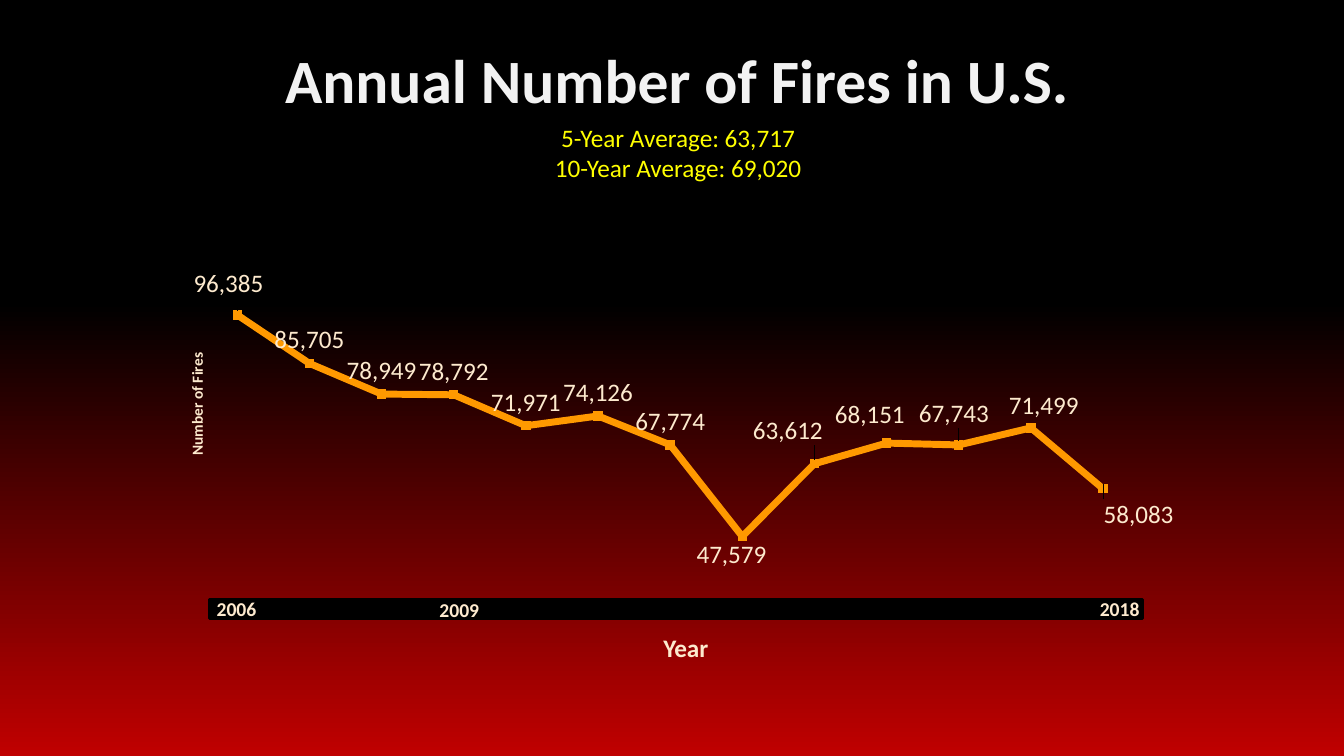
from lxml import etree
from pptx import Presentation
from pptx.chart.data import CategoryChartData
from pptx.dml.color import RGBColor
from pptx.enum.chart import XL_CHART_TYPE, XL_LABEL_POSITION, XL_MARKER_STYLE
from pptx.enum.shapes import MSO_SHAPE
from pptx.enum.text import MSO_ANCHOR, PP_ALIGN
from pptx.oxml.ns import qn
from pptx.util import Inches, Pt

LINE = XL_CHART_TYPE.LINE_MARKERS
ABOVE = XL_LABEL_POSITION.ABOVE
SQUARE = XL_MARKER_STYLE.SQUARE
RECT = MSO_SHAPE.RECTANGLE
MIDDLE = MSO_ANCHOR.MIDDLE
LEFT, CENTER = PP_ALIGN.LEFT, PP_ALIGN.CENTER

FACE = "Calibri"
BLACK, RED, CREAM, ORANGE = "000000", "C00000", "FDEACE", "FF9900"
FIRES = [96385, 85705, 78949, 78792, 71971, 74126, 67774,
         47579, 63612, 68151, 67743, 71499, 58083]
# Label shifts by point, in percent of the chart's width and height
SHIFTS = {0: (-0.9, -1.4), 7: (-1.1, 7.3), 8: (-2.7, -1.7), 9: (-1.7, -0.9),
          10: (-0.5, -1.4), 11: (1.3, 0.2), 12: (3.6, 8.5)}


def color(code):
    return RGBColor.from_string(code)


def style(font, size, code, bold=False):
    font.name, font.size, font.bold = FACE, Pt(size), bold
    font.color.rgb = color(code)


def paint(slide):
    fill = slide.background.fill
    fill.gradient()
    fill.gradient_angle = 270
    for stop, place, code in zip(fill.gradient_stops, (0.4, 1), (BLACK, RED)):
        stop.position = place
        stop.color.rgb = color(code)


def add_text(slide, box, text, size, code=CREAM, bold=True, align=LEFT, wrap=True):
    shape = slide.shapes.add_textbox(*map(Inches, box))
    frame = shape.text_frame
    frame.word_wrap = wrap
    frame.text = text
    for para in frame.paragraphs:
        para.alignment = align
        for run in para.runs:
            style(run.font, size, code, bold)
    return shape


def add_band(slide, box):
    band = slide.shapes.add_shape(RECT, *map(Inches, box))
    band.shadow.inherit = False
    band.fill.solid()
    band.fill.fore_color.rgb = color(BLACK)
    band.line.color.rgb = color(BLACK)
    band.line.width = Pt(2)


def set_layout(parent, index, **values):
    """Place a chart element by hand, with the layout as child number index."""
    for old in parent.findall(qn("c:layout")):
        parent.remove(old)
    layout = etree.Element(qn("c:layout"))
    manual = etree.SubElement(layout, qn("c:manualLayout"))
    for tag, val in values.items():
        etree.SubElement(manual, qn("c:" + tag)).set("val", str(val))
    parent.insert(index, layout)


def label_points(series):
    labels = series.data_labels
    labels.show_value = True
    labels.number_format = "#,##0"
    labels.number_format_is_linked = False
    labels.position = ABOVE
    style(labels.font, 18, CREAM)
    for point in SHIFTS:
        label = series.points[point].data_label
        label.position = ABOVE
        style(label.font, 18, CREAM)
    nodes = labels._element.findall(qn("c:dLbl"))
    for node, (right, down) in zip(nodes, SHIFTS.values()):
        set_layout(node, 1, x=right / 100, y=down / 100)


def add_fires(slide, box):
    data = CategoryChartData(number_format="#,##0")
    data.categories = [str(n + 1) for n in range(len(FIRES))]
    data.add_series("Series 1", FIRES)
    chart = slide.shapes.add_chart(LINE, *map(Inches, box), data).chart
    chart.has_legend = chart.has_title = False
    style(chart.font, 18, BLACK)
    for axis in (chart.category_axis, chart.value_axis):
        axis.has_major_gridlines = False
        axis.visible = False
    chart.value_axis.minimum_scale = 0
    chart.value_axis.maximum_scale = 120000

    plot = chart.plots[0]
    plot.vary_by_categories = False
    series = plot.series[0]
    series.smooth = False
    series.format.line.color.rgb = color(ORANGE)
    series.format.line.width = Pt(5)
    marker = series.marker
    marker.style, marker.size = SQUARE, 6
    marker.format.fill.solid()
    marker.format.fill.fore_color.rgb = color(ORANGE)
    marker.format.line.color.rgb = color(ORANGE)
    label_points(series)
    area = series._element.getparent().getparent()
    set_layout(area, 0, layoutTarget="inner", xMode="edge", yMode="edge",
               x=0.02, y=0.03, w=0.95, h=0.95)


def main():
    deck = Presentation()
    deck.slide_width, deck.slide_height = Inches(13.33), Inches(7.5)
    slide = deck.slides.add_slide(deck.slide_layouts[6])
    paint(slide)
    add_fires(slide, (1.8, 1.89, 9.84, 5.69))
    add_band(slide, (2.08, 5.95, 9.25, 0.19))
    title = add_text(slide, (2.22, 0.3, 9, 0.96), "Annual Number of Fires in U.S.",
                     44, "F2F2F2", align=CENTER)
    title.text_frame.vertical_anchor = MIDDLE
    for year, left, top in (("2006", 2.05, 5.87), ("2018", 10.81, 5.87),
                            ("2009", 4.26, 5.88)):
        add_text(slide, (left, top, 0.7, 0.33), year, 14)
    add_text(slide, (6.48, 6.22, 0.71, 0.4), "Year", 18)
    side = add_text(slide, (1.34, 3.87, 1.22, 0.28), "Number of Fires", 11)
    side.rotation = 270
    add_text(slide, (5.38, 1.16, 2.69, 0.71),
             "5-Year Average: 63,717\n10-Year Average: 69,020",
             18, "FFFF00", bold=False, align=CENTER, wrap=False)
    deck.save("out.pptx")


if __name__ == "__main__":
    main()
